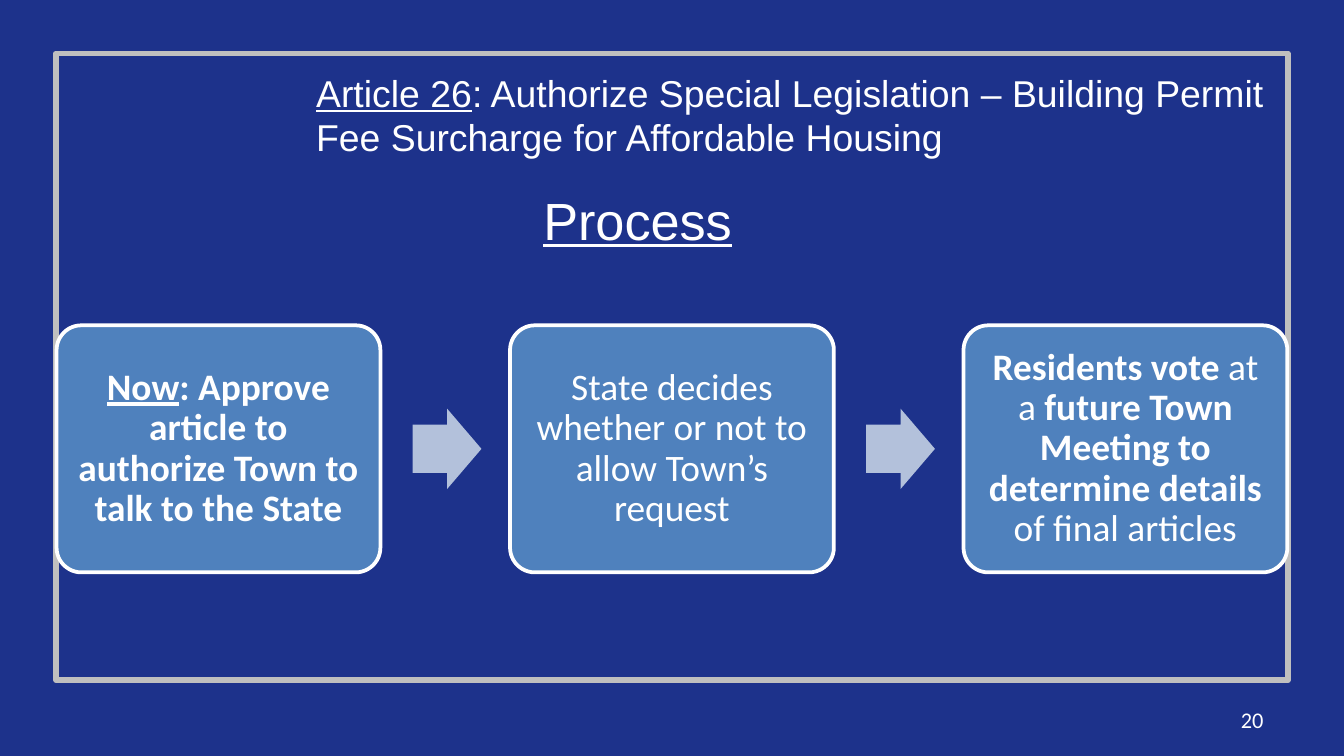
from pptx import Presentation
from pptx.dml.color import RGBColor
from pptx.enum.shapes import MSO_SHAPE as Shape
from pptx.enum.text import MSO_ANCHOR as Anchor, PP_ALIGN as Align
from pptx.util import Cm, Pt

WHITE = "FFFFFF"
ARTICLE = {"name": "Arial", "size": Pt(20)}
HEADING = {"name": "Arial", "size": Pt(28), "underline": True}
STEP = {"name": "Calibri", "size": Pt(20)}
NUMBER = {"name": "Calibri", "size": Pt(12)}
BOLD = {"bold": True}
PLAIN = {"bold": False}
UNDERLINED = {"underline": True}

STEPS = [
    [("Now", BOLD | UNDERLINED),
     (": Approve article to authorize Town to talk to the State", BOLD)],
    [("State decides whether or not to allow Town’s request", PLAIN)],
    [("Residents vote ", BOLD), ("at a ", PLAIN),
     ("future Town Meeting to determine details ", BOLD),
     ("of final articles", PLAIN)],
]


def color(value):
    return RGBColor.from_string(value)


def place(shape, box):
    for name, length in zip(("left", "top", "width", "height"), box):
        setattr(shape, name, Cm(length))


def write(shape, spans, style, align, anchor=Anchor.TOP):
    frame = shape.text_frame
    frame.word_wrap = True
    frame.vertical_anchor = anchor
    para = frame.paragraphs[0]
    para.alignment = align
    for text, changes in spans:
        span = para.add_run()
        span.text = text
        for name, value in (style | changes).items():
            setattr(span.font, name, value)
        span.font.color.rgb = color(WHITE)
    return frame


def add_text(page, box, spans, style, align, anchor=Anchor.TOP):
    shape = page.shapes.add_textbox(*map(Cm, box))
    write(shape, spans, style, align, anchor)


def add_block(page, kind, box, adjustments=(), fill=None, line=None, weight=0):
    shape = page.shapes.add_shape(kind, *map(Cm, box))
    shape.shadow.inherit = False
    for index, value in enumerate(adjustments):
        shape.adjustments[index] = value
    if fill:
        shape.fill.solid()
        shape.fill.fore_color.rgb = color(fill)
    else:
        shape.fill.background()
    if line:
        shape.line.color.rgb = color(line)
        shape.line.width = Pt(weight)
    else:
        shape.line.fill.background()
    return shape


def add_title(page, box):
    title = page.shapes.title
    place(title, box)
    spans = [("Article 26", UNDERLINED),
             (": Authorize Special Legislation – Building Permit "
              "Fee Surcharge for Affordable Housing", {})]
    write(title, spans, ARTICLE, Align.LEFT)


def add_process(page, box):
    left, top, width, height = box
    step_width, arrow_width, arrow_height, arrow_gap = 6.12, 1.3, 1.52, 0.61
    pitch = (width - step_width) / (len(STEPS) - 1)
    for index, spans in enumerate(STEPS):
        step_left = left + index * pitch
        step = add_block(page, Shape.ROUNDED_RECTANGLE,
                         (step_left, top, step_width, height),
                         [0.1], "4F81BD", WHITE, 2)
        frame = write(step, spans, STEP, Align.CENTER, Anchor.MIDDLE)
        for side in ("left", "top", "right", "bottom"):
            setattr(frame, f"margin_{side}", Cm(0.2))
        frame.paragraphs[0].line_spacing = 0.9
        if index < len(STEPS) - 1:
            arrow_box = (step_left + step_width + arrow_gap,
                         top + (height - arrow_height) / 2,
                         arrow_width, arrow_height)
            add_block(page, Shape.RIGHT_ARROW, arrow_box, [0.6, 0.5], "B3C1DB")


def main():
    deck = Presentation()
    deck.slide_width, deck.slide_height = Cm(25.4), Cm(14.29)
    page = deck.slides.add_slide(deck.slide_layouts[5])
    page.background.fill.solid()
    page.background.fill.fore_color.rgb = color("1D328B")

    add_block(page, Shape.RECTANGLE, (1.06, 1.01, 23.28, 11.85),
              line="BFBFBF", weight=3)
    add_title(page, (5.72, 1.19, 18.49, 1.96))
    add_text(page, (1.47, 3.43, 21.16, 1.52), [("Process", {})],
             HEADING, Align.CENTER)
    add_process(page, (1.07, 6.15, 23.26, 4.67))
    add_text(page, (18.21, 13.23, 5.92, 0.76), [("20", {})],
             NUMBER, Align.RIGHT, Anchor.MIDDLE)
    deck.save("out.pptx")


if __name__ == "__main__":
    main()
